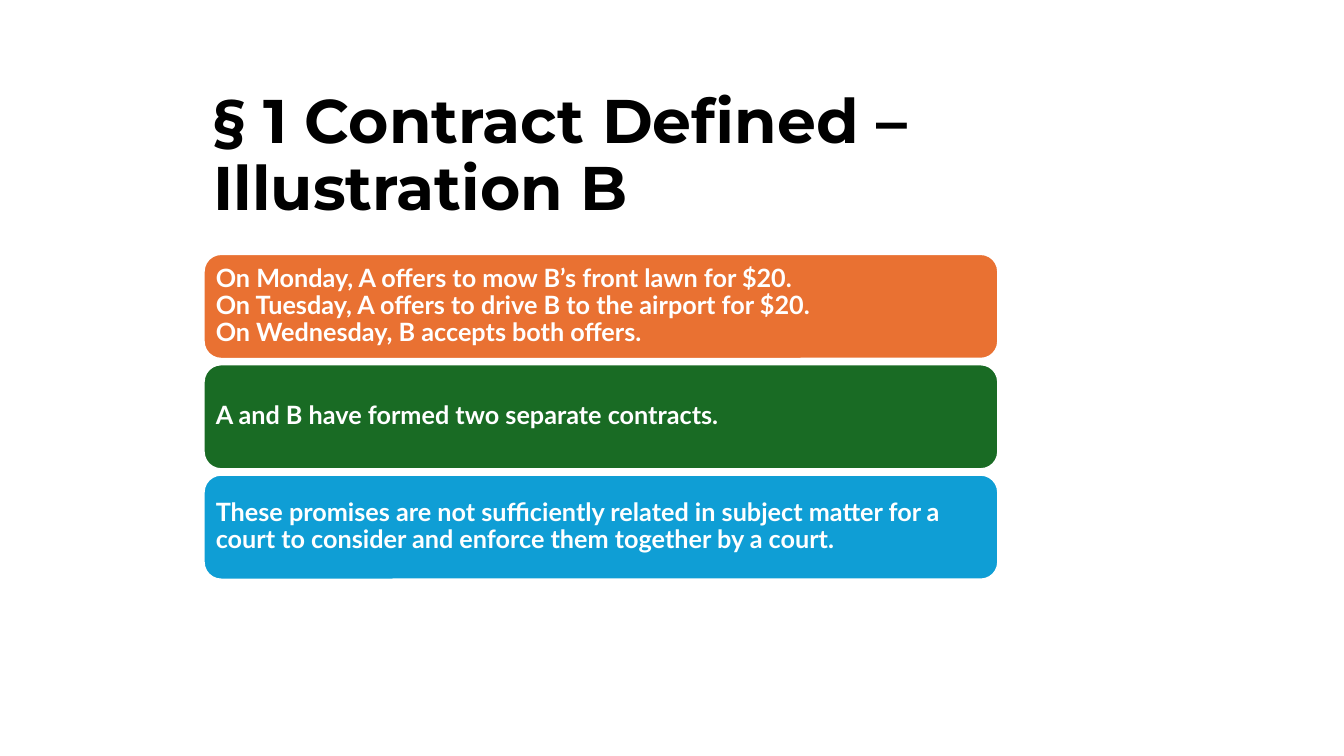
from dataclasses import dataclass

from pptx import Presentation
from pptx import util as u
from pptx.dml.color import RGBColor
from pptx.enum import shapes, text


@dataclass(frozen=True)
class Theme:
    black: str = "000000"
    white: str = "FFFFFF"
    orange: str = "E97132"
    green: str = "196B24"
    blue: str = "0F9ED5"
    title_font: str = "Montserrat"
    body_font: str = "Lato"
    title_size: int = 44
    body_size: int = 18
    outline: float = 1.5


THEME = Theme()
LEFT = 2.02
CARD_TOP = 2.52
CARD_WIDTH = 7.88
CARD_HEIGHT = 1.04
CARD_PITCH = 1.095


def set_format(target, values):
    for name, value in values.items():
        setattr(target, name, value)


def write_text(shape, wording, font, size, color, inset_x, inset_y):
    frame = shape.text_frame
    set_format(frame, {
        "word_wrap": True,
        "vertical_anchor": text.MSO_ANCHOR.MIDDLE,
        "margin_left": u.Inches(inset_x),
        "margin_right": u.Inches(inset_x),
        "margin_top": u.Inches(inset_y),
        "margin_bottom": u.Inches(inset_y),
    })
    paragraph = frame.paragraphs[0]
    paragraph.text = wording
    set_format(paragraph, {"alignment": text.PP_ALIGN.LEFT, "line_spacing": 0.9})
    for run in paragraph.runs:
        set_format(run.font, {"name": font, "size": u.Pt(size), "bold": True})
        run.font.color.rgb = RGBColor.from_string(color)


def add_title(slide, wording):
    box = slide.shapes.add_textbox(
        u.Inches(LEFT), u.Inches(0.75), u.Inches(9.45), u.Inches(1.62))
    write_text(box, wording, THEME.title_font, THEME.title_size, THEME.black, 0.1, 0.05)


def add_card(slide, top, color, wording):
    card = slide.shapes.add_shape(
        shapes.MSO_SHAPE.ROUNDED_RECTANGLE,
        u.Inches(LEFT), u.Inches(top), u.Inches(CARD_WIDTH), u.Inches(CARD_HEIGHT))
    card.shadow.inherit = False
    card.fill.solid()
    card.fill.fore_color.rgb = RGBColor.from_string(color)
    card.line.color.rgb = RGBColor.from_string(THEME.white)
    card.line.width = u.Pt(THEME.outline)
    write_text(card, wording, THEME.body_font, THEME.body_size, THEME.white, 0.07, 0.07)


def main():
    presentation = Presentation()
    set_format(presentation, {
        "slide_width": u.Inches(13.33), "slide_height": u.Inches(7.5)})
    slide = presentation.slides.add_slide(presentation.slide_layouts[6])
    add_title(slide, "§ 1 Contract Defined – \nIllustration B")
    cards = [
        (THEME.orange,
         "On Monday, A offers to mow B’s front lawn for $20. \n"
         "On Tuesday, A offers to drive B to the airport for $20. \n"
         "On Wednesday, B accepts both offers."),
        (THEME.green, "A and B have formed two separate contracts."),
        (THEME.blue,
         "These promises are not sufficiently related in subject matter for a "
         "court to consider and enforce them together by a court."),
    ]
    for index, (color, wording) in enumerate(cards):
        add_card(slide, CARD_TOP + index * CARD_PITCH, color, wording)
    presentation.save("out.pptx")


if __name__ == "__main__":
    main()
